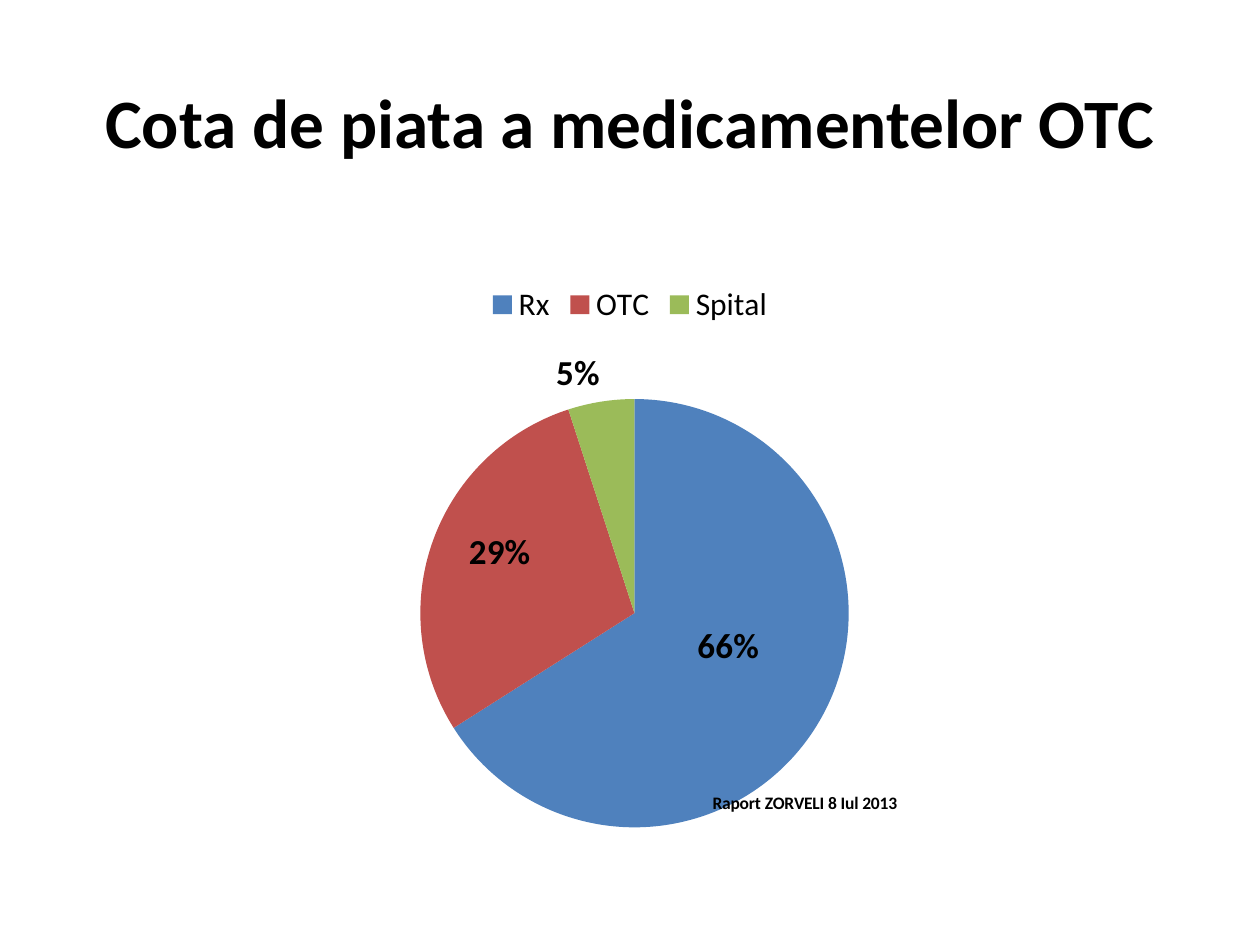
from lxml import etree
from pptx import Presentation
from pptx import util as u
from pptx.chart.data import CategoryChartData
from pptx.dml.color import RGBColor
from pptx.enum import chart as ch, text
from pptx.oxml.ns import qn

BLACK = RGBColor(0, 0, 0)
BLUE = RGBColor(0x4F, 0x81, 0xBD)
RED = RGBColor(0xC0, 0x50, 0x4D)
GREEN = RGBColor(0x9B, 0xBB, 0x59)
FACE = "Calibri"


def style(font, **fmt):
    for key, val in {"name": FACE, **fmt}.items():
        setattr(font, key, val)
    font.color.rgb = BLACK


def place(node, index, **vals):
    """Give a chart part a manual layout, as fractions of the chart."""
    for old in node.findall(qn("c:layout")):
        node.remove(old)
    lay = etree.Element(qn("c:layout"))
    node.insert(index, lay)
    man = etree.SubElement(lay, qn("c:manualLayout"))
    for key, val in vals.items():
        etree.SubElement(man, qn("c:" + key)).set("val", str(val))


def head(slide, box, words):
    title = slide.shapes.title
    title.left, title.top, title.width, title.height = box
    frame = title.text_frame
    frame.text = words
    frame.word_wrap = True
    frame.vertical_anchor = text.MSO_ANCHOR.MIDDLE
    para = frame.paragraphs[0]
    para.alignment = text.PP_ALIGN.CENTER
    style(para.runs[0].font, size=u.Pt(39.6), bold=True)


def pie(slide, box, parts, note):
    data = CategoryChartData()
    data.categories = [name for name, *_ in parts]
    data.add_series("Series 1", [val for _, val, *_ in parts])
    chart = slide.shapes.add_chart(ch.XL_CHART_TYPE.PIE, *box, data).chart
    style(chart.font, size=u.Pt(18))
    root = chart.element
    place(root.find(".//" + qn("c:plotArea")), 0, layoutTarget="inner",
          xMode="edge", yMode="edge", x=0.315, y=0.286, w=0.378, h=0.687)

    # Source note, held in the chart title
    chart.has_title = True
    frame = chart.chart_title.text_frame
    frame.text = note
    style(frame.paragraphs[0].runs[0].font, size=u.Pt(10), bold=True)
    chart.chart_title.include_in_layout = False
    place(root.find(".//" + qn("c:title")), 1,
          xMode="edge", yMode="edge", x=0.57, y=0.91)

    # Legend
    chart.has_legend = True
    chart.legend.position = ch.XL_LEGEND_POSITION.TOP
    chart.legend.include_in_layout = False
    style(chart.legend.font, size=u.Pt(18))

    # Slices and their labels
    plot = chart.plots[0]
    plot.vary_by_categories = True
    row = plot.series[0]
    marks = row.data_labels
    marks.show_percentage, marks.show_value = True, False
    style(marks.font, size=u.Pt(20), bold=True)
    for i, (_, _, color, spot, shift) in enumerate(parts):
        point = row.points[i]
        point.format.fill.solid()
        point.format.fill.fore_color.rgb = color
        label = point.data_label
        style(label.font, size=u.Pt(20), bold=True)
        label.position = spot
        node = root.findall(".//" + qn("c:dLbl"))[i]
        node.find(qn("c:showVal")).set("val", "0")
        node.find(qn("c:showPercent")).set("val", "1")
        if shift:
            place(node, 1, x=shift[0], y=shift[1])


def main():
    deck = Presentation()
    deck.slide_width, deck.slide_height = u.Cm(25.4), u.Cm(19.05)
    slide = deck.slides.add_slide(deck.slide_layouts[5])
    left, wide = u.Cm(1.27), u.Cm(22.86)
    head(slide, (left, u.Cm(0.85), wide, u.Cm(3.18)),
         "Cota de piata a medicamentelor OTC")
    spot = ch.XL_LABEL_POSITION
    parts = [
        ("Rx", 66, BLUE, spot.CENTER, (0, -0.03)),
        ("OTC", 29, RED, spot.CENTER, (-0.03, -0.04)),
        ("Spital", 5, GREEN, spot.OUTSIDE_END, None),
    ]
    pie(slide, (left, u.Cm(4.45), wide, u.Cm(12.57)), parts,
        "Raport ZORVELI 8 Iul 2013")
    deck.save("out.pptx")


if __name__ == "__main__":
    main()
